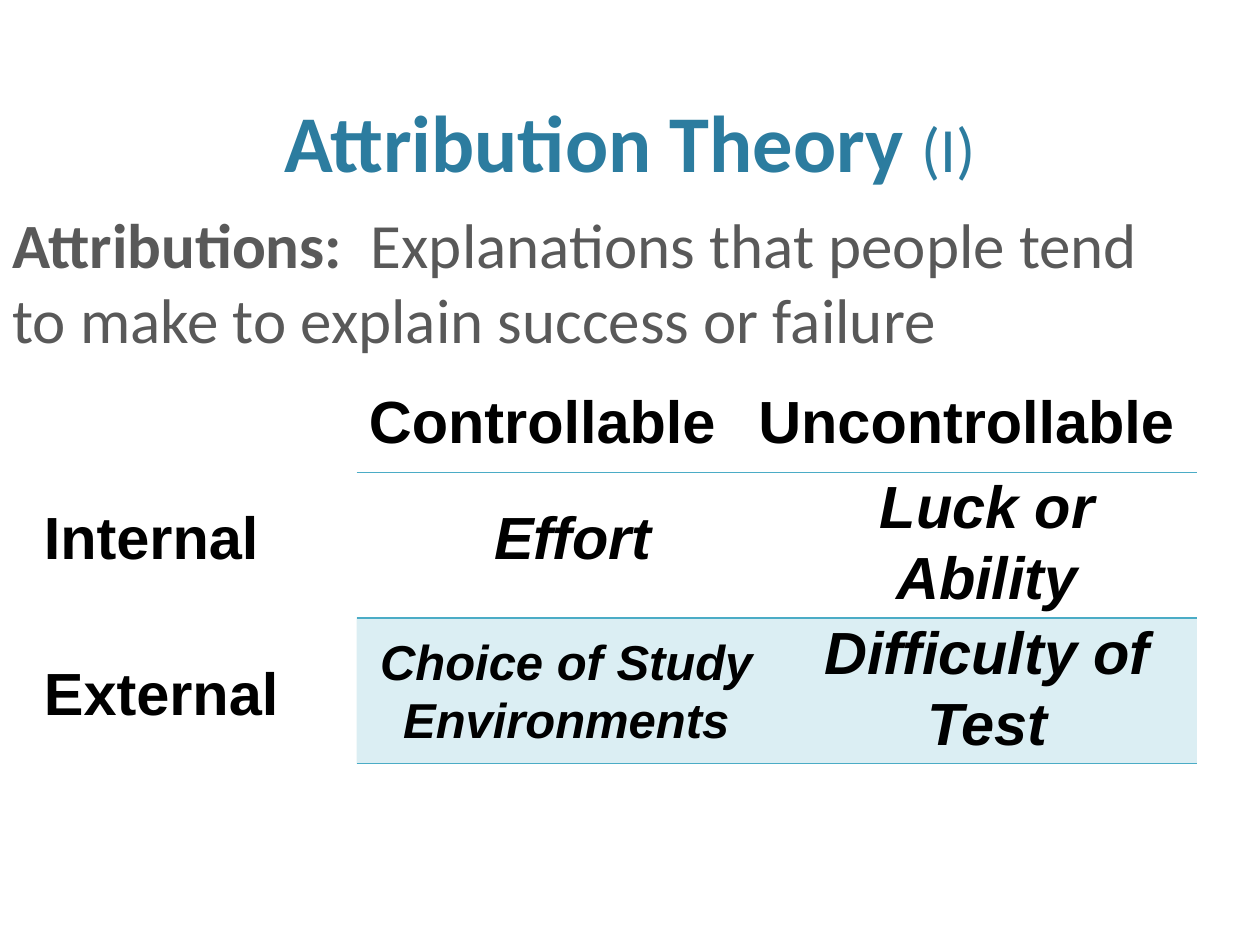
from dataclasses import dataclass

from lxml import etree
from pptx import Presentation
from pptx.dml.color import RGBColor
from pptx.enum.text import MSO_ANCHOR, PP_ALIGN
from pptx.oxml.ns import qn
from pptx.util import Inches, Pt

LEFT, CENTER = PP_ALIGN.LEFT, PP_ALIGN.CENTER
TOP, BOTTOM = MSO_ANCHOR.TOP, MSO_ANCHOR.BOTTOM


@dataclass(frozen=True)
class Theme:
    title_color: str = "2C7C9F"
    body_color: str = "595959"
    label_color: str = "000000"
    accent: str = "4BACC6"
    shade_percent: int = 20
    heading_font: str = "Calibri"
    label_font: str = "Arial"
    title_size: int = 46
    body_size: int = 36
    label_size: int = 34
    small_size: int = 28
    border_width: int = 1


THEME = Theme()


def add_text_box(slide, box, align=LEFT, anchor=TOP):
    shape = slide.shapes.add_textbox(*map(Inches, box))
    frame = shape.text_frame
    frame.word_wrap = True
    frame.vertical_anchor = anchor
    paragraph = frame.paragraphs[0]
    paragraph.alignment = align
    return paragraph


def add_run(paragraph, text, font, size, color, bold=False, italic=False):
    run = paragraph.add_run()
    run.text = text
    run.font.name = font
    run.font.size = Pt(size)
    run.font.bold = bold
    run.font.italic = italic
    run.font.color.rgb = RGBColor.from_string(color)


def add_title(slide):
    paragraph = add_text_box(slide, (0, 0.3, 10, 1.25), CENTER, BOTTOM)
    font, color = THEME.heading_font, THEME.title_color
    add_run(paragraph, "Attribution Theory ", font, THEME.title_size, color, bold=True)
    add_run(paragraph, "(I)", font, THEME.body_size, color)


def add_definition(slide):
    paragraph = add_text_box(slide, (0, 1.58, 9.5, 1.25))
    style = (THEME.heading_font, THEME.body_size, THEME.body_color)
    add_run(paragraph, "Attributions:  ", *style, bold=True)
    add_run(
        paragraph,
        "Explanations that people tend to make to explain success or failure",
        *style,
    )


def add_label(slide, text, box):
    paragraph = add_text_box(slide, box)
    add_run(paragraph, text, THEME.label_font, THEME.label_size, THEME.label_color, bold=True)


def add_example(slide, text, box, size=THEME.label_size):
    paragraph = add_text_box(slide, box, CENTER)
    add_run(paragraph, text, THEME.label_font, size, THEME.label_color, bold=True, italic=True)


def set_borders(cell):
    properties = cell._tc.get_or_add_tcPr()
    for index, side in enumerate(("lnL", "lnR", "lnT", "lnB")):
        line = etree.Element(qn(f"a:{side}"), w=str(Pt(THEME.border_width)))
        if side in ("lnT", "lnB"):
            fill = etree.SubElement(line, qn("a:solidFill"))
            etree.SubElement(fill, qn("a:srgbClr"), val=THEME.accent)
        else:
            etree.SubElement(line, qn("a:noFill"))
        properties.insert(index, line)


def shade(cell):
    cell.fill.solid()
    cell.fill.fore_color.rgb = RGBColor.from_string(THEME.accent)
    color = cell._tc.tcPr.find(".//" + qn("a:solidFill") + "/" + qn("a:srgbClr"))
    etree.SubElement(color, qn("a:alpha"), val=str(THEME.shade_percent * 1000))


def add_grid(slide):
    box = map(Inches, (2.83, 3.75, 6.67, 2.31))
    table = slide.shapes.add_table(2, 2, *box).table
    table.first_row = False
    table.horz_banding = False
    for column in (0, 1):
        table.cell(0, column).fill.background()
        shade(table.cell(1, column))
    for cell in table.iter_cells():
        set_borders(cell)


def main():
    presentation = Presentation()
    presentation.slide_width = Inches(10)
    presentation.slide_height = Inches(7.5)
    slide = presentation.slides.add_slide(presentation.slide_layouts[6])
    add_definition(slide)
    add_grid(slide)
    add_label(slide, "Internal", (0.25, 3.92, 1.92, 0.67))
    add_label(slide, "External", (0.25, 5.16, 2.25, 0.67))
    add_label(slide, "Controllable", (2.83, 3, 3.08, 0.67))
    add_label(slide, "Uncontrollable", (5.92, 3, 3.58, 0.67))
    add_example(slide, "Luck or Ability", (6.17, 3.67, 3.33, 1.24))
    add_example(slide, "Effort", (2.92, 3.92, 3.25, 0.67))
    add_example(slide, "Difficulty of Test", (6.17, 4.83, 3.33, 1.23))
    add_example(
        slide, "Choice of Study Environments", (2.83, 4.96, 3.33, 1.03), THEME.small_size
    )
    add_title(slide)
    presentation.save("out.pptx")


if __name__ == "__main__":
    main()
